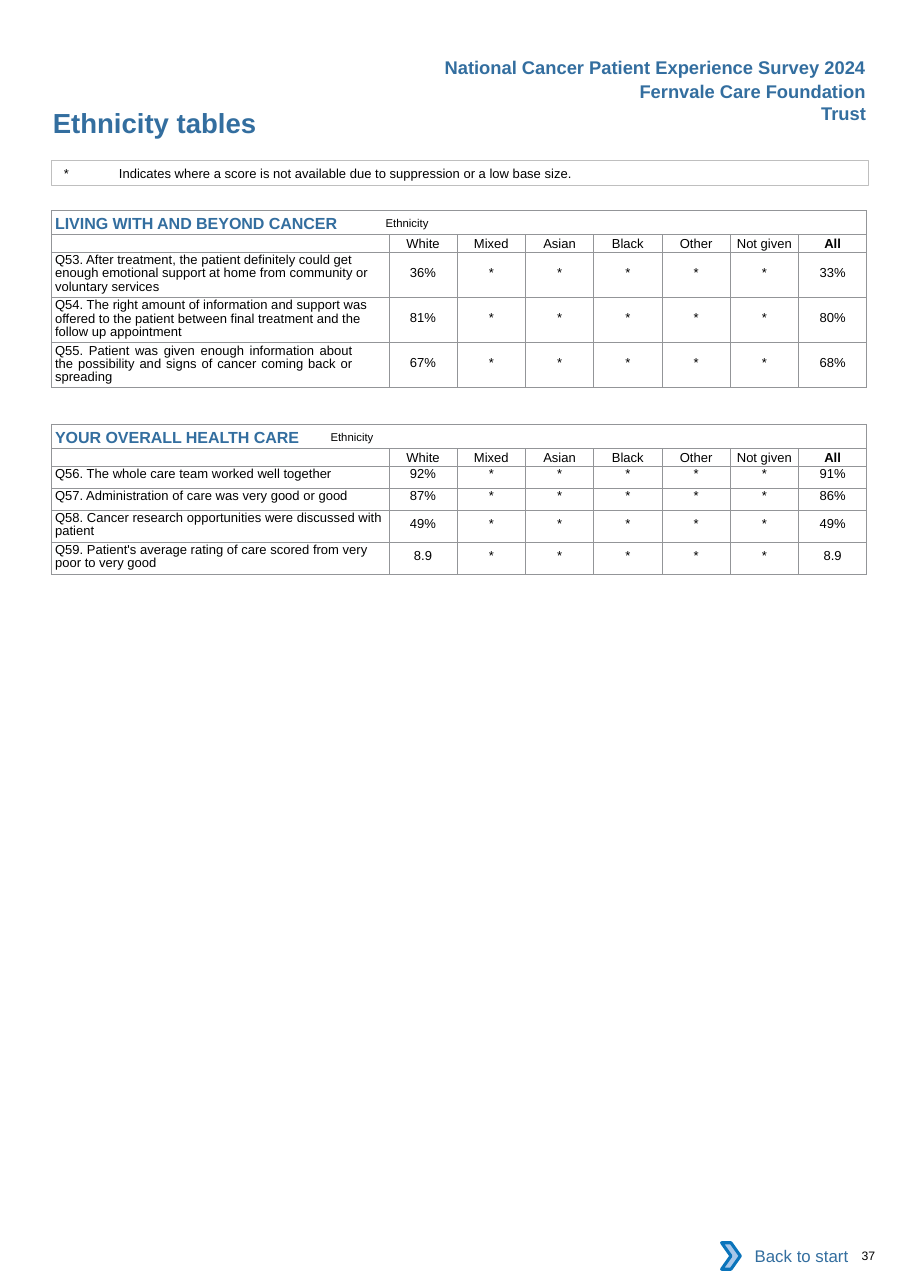
from lxml.etree import SubElement
from pptx import Presentation
from pptx.dml.color import RGBColor
from pptx.enum.shapes import MSO_SHAPE as Shape
from pptx.enum.text import MSO_ANCHOR as Anchor, MSO_AUTO_SIZE as AutoSize, PP_ALIGN as Align
from pptx.oxml import parse_xml
from pptx.oxml.ns import nsdecls, qn
from pptx.util import Inches, Pt

BLUE = RGBColor(0x33, 0x6E, 0x9F)
BLACK = RGBColor(0, 0, 0)
WHITE = RGBColor(255, 255, 255)
GRID = RGBColor(0x93, 0x95, 0x98)
NOTE_EDGE = RGBColor(0xBF, 0xBF, 0xBF)
ARROW_FILL = RGBColor(0xA8, 0xC7, 0xE9)
ARROW_EDGE = RGBColor(0x0A, 0x74, 0xBB)

GROUPS = ["White", "Mixed", "Asian", "Black", "Other", "Not given", "All"]
SUPPRESSED = ["*"] * 5
COLUMN_WIDTHS = [3.06] + [0.62] * len(GROUPS)

# Lines in the question: row height, score inset, question inset, line spacing
ROW_RULES = {
    1: (0.2, 0.01, 0.01, None),
    2: (0.29, 0.06, 0.02, Pt(8.6)),
    3: (0.41, 0.12, 0.02, Pt(8.6)),
}

# Question, lines it takes, score for White, score for All
LIVING_BEYOND = [
    ("Q53. After treatment, the patient definitely could get enough emotional "
     "support at home from community or voluntary services", 3, "36%", "33%"),
    ("Q54. The right amount of information and support was offered to the patient "
     "between final treatment and the follow up appointment", 3, "81%", "80%"),
    ("Q55. Patient was given enough information about the possibility and signs "
     "of cancer coming back or spreading", 3, "67%", "68%"),
]
OVERALL_CARE = [
    ("Q56. The whole care team worked well together", 1, "92%", "91%"),
    ("Q57. Administration of care was very good or good", 1, "87%", "86%"),
    ("Q58. Cancer research opportunities were discussed with patient", 2, "49%", "49%"),
    ("Q59. Patient's average rating of care scored from very poor to very good",
     2, "8.9", "8.9"),
]
JUSTIFIED = "Q55."


def apply(target, formats):
    for attribute, value in formats.items():
        setattr(target, attribute, value)


def insets(left=0, top=0, right=0, bottom=0):
    return {"margin_left": Inches(left), "margin_top": Inches(top),
            "margin_right": Inches(right), "margin_bottom": Inches(bottom)}


class Page:
    def __init__(self, slide, font="Arial"):
        self.slide = slide
        self.font = font

    def words(self, paragraph, text, size, color=BLACK, bold=False, baseline=None):
        run = paragraph.add_run()
        run.text = text
        apply(run.font, {"name": self.font, "size": Pt(size), "bold": bold})
        run.font.color.rgb = color
        if baseline:
            run.font._element.set("baseline", str(baseline))

    def indent(self, paragraph, left, tab=None):
        properties = paragraph._p.get_or_add_pPr()
        properties.set("marL", str(Inches(left)))
        properties.set("indent", "0")
        if tab:
            tabs = SubElement(properties, qn("a:tabLst"))
            SubElement(tabs, qn("a:tab"), pos=str(Inches(tab)), algn="l")

    def title(self, text, box):
        heading = self.slide.shapes.title
        apply(heading, dict(zip(("left", "top", "width", "height"), map(Inches, box))))
        frame = heading.text_frame
        apply(frame, {**insets(), "vertical_anchor": Anchor.TOP,
                      "auto_size": AutoSize.SHAPE_TO_FIT_TEXT})
        frame.paragraphs[0].alignment = Align.LEFT
        self.indent(frame.paragraphs[0], 0.01)
        self.words(frame.paragraphs[0], text, 18, BLUE, True)

    def label(self, text, box, size, color, bold=False, align=Align.LEFT,
              left=0, **frame_formats):
        frame = self.slide.shapes.add_textbox(*map(Inches, box)).text_frame
        apply(frame, {"auto_size": AutoSize.SHAPE_TO_FIT_TEXT, **frame_formats})
        frame.paragraphs[0].alignment = align
        self.indent(frame.paragraphs[0], left)
        self.words(frame.paragraphs[0], text, size, color, bold)

    def shape(self, kind, box, fill=None, edge=None, weight=0.5):
        block = self.slide.shapes.add_shape(kind, *map(Inches, box))
        block.shadow.inherit = False
        if fill is None:
            block.fill.background()
        else:
            block.fill.solid()
            block.fill.fore_color.rgb = fill
        if edge is None:
            block.line.fill.background()
        else:
            block.line.color.rgb = edge
            block.line.width = Pt(weight)
        return block

    def borders(self, cell):
        properties = cell._tc.get_or_add_tcPr()
        for position, side in enumerate("LRTB"):
            properties.insert(position, parse_xml(
                f'<a:ln{side} {nsdecls("a")} w="{Pt(0.5)}"><a:solidFill>'
                f'<a:srgbClr val="{GRID}"/></a:solidFill></a:ln{side}>'))

    def cell_text(self, cell, text, align=Align.CENTER, bold=False, spacing=None):
        paragraph = cell.text_frame.paragraphs[0]
        apply(paragraph, {"alignment": align, "line_spacing": spacing})
        if align != Align.CENTER:
            self.indent(paragraph, 0.03)
        self.words(paragraph, text, 8.5, bold=bold)

    def scores(self, heading, questions, top):
        heights = [0.22, 0.16] + [ROW_RULES[lines][0] for _, lines, _, _ in questions]
        table = self.slide.shapes.add_table(
            len(heights), len(COLUMN_WIDTHS), Inches(0.47), Inches(top),
            Inches(sum(COLUMN_WIDTHS)), Inches(sum(heights))).table
        apply(table, {"first_row": False, "horz_banding": False})
        for column, width in zip(table.columns, COLUMN_WIDTHS):
            column.width = Inches(width)
        for row, height in zip(table.rows, heights):
            row.height = Inches(height)
        for cell in table.iter_cells():
            apply(cell, {**insets(), "vertical_anchor": Anchor.MIDDLE})
            cell.fill.background()
            self.borders(cell)
            SubElement(cell.text_frame.paragraphs[0]._p, qn("a:endParaRPr"), sz="850")

        # Section heading across all columns
        banner = table.cell(0, 0)
        banner.merge(table.cell(0, len(GROUPS)))
        paragraph = banner.text_frame.paragraphs[0]
        self.indent(paragraph, 0.03, tab=4.92)
        self.words(paragraph, heading + "\t", 10.5, BLUE, True)
        self.words(paragraph, "Ethnicity", 12.8, baseline=10000)

        # Column names
        for column, group in enumerate(GROUPS, 1):
            self.cell_text(table.cell(1, column), group, bold=group == "All",
                           spacing=Pt(9.9))

        # Questions and their scores
        for row, (question, lines, white, everyone) in enumerate(questions, 2):
            _, score_inset, question_inset, spacing = ROW_RULES[lines]
            justified = question.startswith(JUSTIFIED)
            wording = table.cell(row, 0)
            apply(wording, {**insets(top=question_inset, right=0.33 if justified else 0),
                            "vertical_anchor": Anchor.TOP})
            self.cell_text(wording, question, Align.JUSTIFY if justified else Align.LEFT,
                           spacing=spacing)
            for column, score in enumerate([white, *SUPPRESSED, everyone], 1):
                cell = table.cell(row, column)
                apply(cell, {**insets(top=score_inset), "vertical_anchor": Anchor.TOP})
                self.cell_text(cell, score)

    def note(self, mark, text, box):
        frame = self.shape(Shape.RECTANGLE, box, edge=NOTE_EDGE).text_frame
        apply(frame, {**insets(top=0.04, bottom=0.04), "word_wrap": True,
                      "vertical_anchor": Anchor.TOP})
        paragraph = frame.paragraphs[0]
        paragraph.alignment = Align.LEFT
        self.indent(paragraph, 0.11, tab=0.34)
        self.words(paragraph, f"{mark}\t{text}", 8.5)

    def back_button(self, text):
        frame = self.shape(Shape.RECTANGLE, (6.62, 11.19, 1.18, 0.42), WHITE).text_frame
        apply(frame, {"vertical_anchor": Anchor.MIDDLE, "word_wrap": True})
        frame.paragraphs[0].alignment = Align.RIGHT
        self.words(frame.paragraphs[0], text, 11, BLUE)
        self.shape(Shape.CHEVRON, (6.55, 11.28, 0.17, 0.24), ARROW_FILL, ARROW_EDGE, 2)


def main():
    deck = Presentation()
    apply(deck, {"slide_width": Inches(8.26), "slide_height": Inches(11.69)})
    page = Page(deck.slides.add_slide(deck.slide_layouts[5]))

    # Headings
    page.title("Ethnicity tables", (0.47, 0.96, 4.5, 0.3))
    page.label("Fernvale Care Foundation Trust", (5.26, 0.68, 2.7, 0.3), 12, BLUE, True,
               Align.RIGHT, word_wrap=False)
    page.label("National Cancer Patient Experience Survey 2024", (3.92, 0.46, 4.04, 0.3),
               12, BLUE, True, Align.RIGHT, word_wrap=False)

    # Key and score tables
    page.note("*", "Indicates where a score is not available due to suppression "
              "or a low base size.", (0.47, 1.46, 7.41, 0.22))
    page.scores("LIVING WITH AND BEYOND CANCER", LIVING_BEYOND, 1.91)
    page.scores("YOUR OVERALL HEALTH CARE", OVERALL_CARE, 3.85)

    # Footer
    page.back_button("Back to start")
    page.label("37", (7.72, 11.33, 0.51, 0.13), 8, BLACK, left=0.1,
               word_wrap=True, **insets())
    deck.save("out.pptx")


if __name__ == "__main__":
    main()
